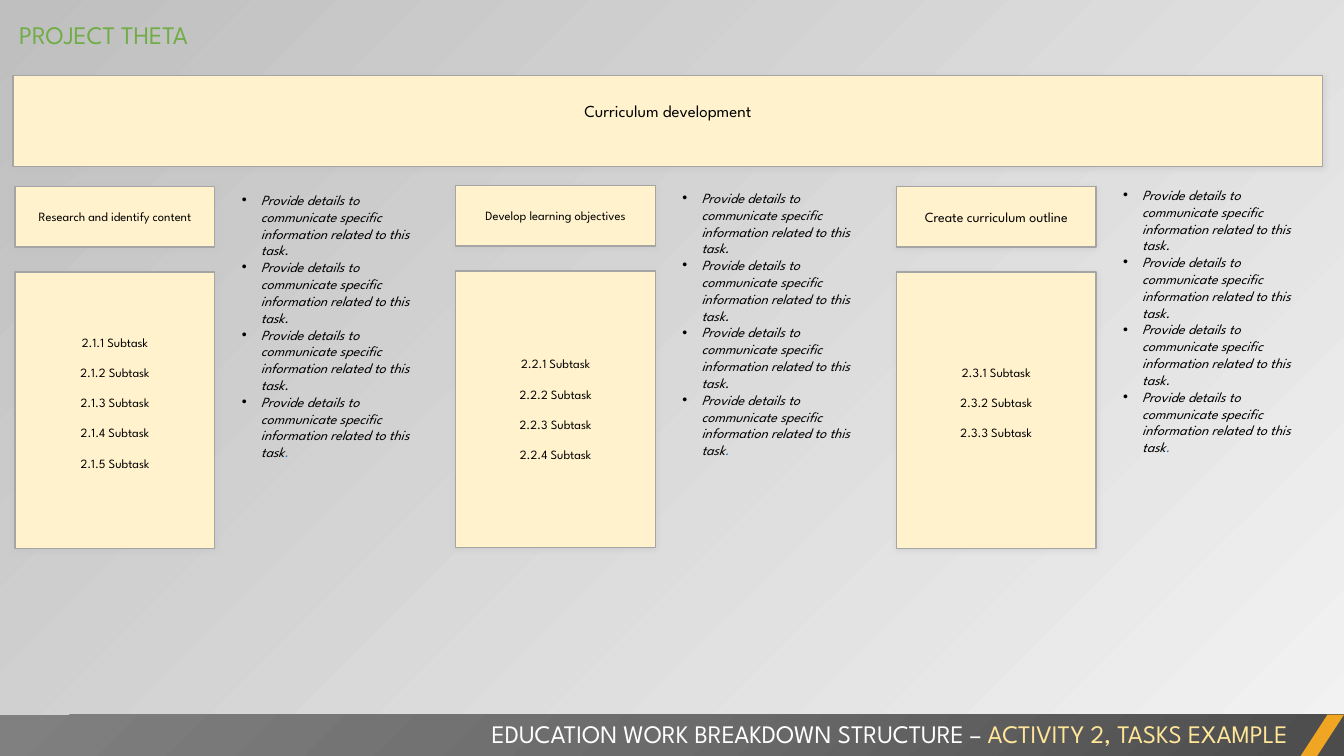
from pptx import Presentation
from pptx.dml.color import RGBColor
from pptx.enum.shapes import MSO_SHAPE
from pptx.enum.text import MSO_ANCHOR, MSO_AUTO_SIZE, PP_ALIGN
from pptx.oxml import parse_xml
from pptx.oxml.ns import nsdecls
from pptx.util import Inches, Pt

# Content
PROJECT = "PROJECT THETA"
ACTIVITY = "Curriculum development"
FOOTER = [("EDUCATION WORK BREAKDOWN STRUCTURE – ", "white"),
          ("ACTIVITY 2, TASKS EXAMPLE", "gold")]
DETAIL = "Provide details to communicate specific information related to this task"
DETAIL_COUNT = 4
# Tops are in inches; "lift" is extra space under the subtasks
TASKS = [
    {"name": "Research and identify content", "size": "small", "subtasks": 5,
     "top": 1.85, "notes_top": 1.85, "lift": 0.15},
    {"name": "Develop learning objectives", "size": "small", "subtasks": 4,
     "top": 1.84, "notes_top": 1.83, "lift": 0},
    {"name": "Create curriculum outline", "size": "note", "subtasks": 3,
     "top": 1.85, "notes_top": 1.8, "lift": 0.15},
]

THEME = {
    "font": "League Spartan",
    "color": {"black": "000000", "white": "FFFFFF", "gold": "FFE699",
              "green": "70AD47", "blue": "2E75B6", "card": "FFF2CC",
              "border": "A5A5A5", "shadow": "BFBFBF", "accent": "F0A622",
              "bg_light": "F2F2F2", "bg_dark": "BFBFBF"},
    "bar": [(0, "4C4C4C"), (50, "6B6B6B"), (100, "808080")],
    "size": {"title": 18, "activity": 12, "note": 10, "small": 9},
}

# Layout, in inches
LEFT, COLUMN_STEP, CARD_W = 0.15, 4.37, 1.98
NAME_H, LIST_DY, LIST_H = 0.6, 0.85, 2.74
NOTES_DX, NOTES_W, NOTES_H = 2.15, 2.06, 3
BAR_TOP, BAR_H = 7.09, 0.41


def rgb(name):
    return RGBColor.from_string(THEME["color"][name])


def add_run(p, text, size, color="black", italic=None):
    r = p.add_run()
    r.text = text
    r.font.name = THEME["font"]
    r.font.size = Pt(THEME["size"][size])
    r.font.color.rgb = rgb(color)
    r.font.italic = italic


def paragraphs(tf, count):
    return [tf.paragraphs[0]] + [tf.add_paragraph() for _ in range(count - 1)]


def add_box(shape, x, y, w, h):
    s = slide.shapes.add_shape(shape, Inches(x), Inches(y), Inches(w), Inches(h))
    s.shadow.inherit = False
    return s


def add_card(x, y, w, h, lines, size, lift=0.0):
    s = add_box(MSO_SHAPE.RECTANGLE, x, y, w, h)
    s.fill.solid()
    s.fill.fore_color.rgb = rgb("card")
    s.line.color.rgb = rgb("border")
    s.line.width = Pt(1)
    effects = s._element.spPr.find(".//{*}effectLst")
    effects.append(parse_xml(
        f'<a:outerShdw {nsdecls("a")} blurRad="{Pt(4)}" dist="{Pt(1)}" dir="5400000" '
        f'algn="t" rotWithShape="0"><a:srgbClr val="{THEME["color"]["shadow"]}">'
        '<a:alpha val="40000"/></a:srgbClr></a:outerShdw>'))
    tf = s.text_frame
    tf.word_wrap = True
    tf.vertical_anchor = MSO_ANCHOR.MIDDLE
    tf.margin_bottom = Inches(0.05 + lift)
    for i, (p, line) in enumerate(zip(paragraphs(tf, len(lines)), lines)):
        p.alignment = PP_ALIGN.CENTER
        p.space_before = Pt(10.8 if i else 0)
        add_run(p, line, size)


def add_text(x, y, w, h):
    s = slide.shapes.add_textbox(Inches(x), Inches(y), Inches(w), Inches(h))
    s.text_frame.word_wrap = True
    return s.text_frame


def add_bullet(p):
    pPr = p._p.get_or_add_pPr()
    pPr.set("marL", str(Inches(0.19)))
    pPr.set("indent", str(Inches(-0.19)))
    pPr.append(parse_xml(f'<a:buFont {nsdecls("a")} typeface="Arial"/>'))
    pPr.append(parse_xml(f'<a:buChar {nsdecls("a")} char="•"/>'))


prs = Presentation()
prs.slide_width, prs.slide_height = Inches(13.33), Inches(7.5)
slide = prs.slides.add_slide(prs.slide_layouts[5])

# Background
bg = slide.background.fill
bg.gradient()
bg.gradient_angle = 135
for stop, (position, name) in zip(bg.gradient_stops, [(0, "bg_light"), (1, "bg_dark")]):
    stop.position = position
    stop.color.rgb = rgb(name)

# Title
title = slide.shapes.title
title.left, title.top = Inches(0.09), Inches(0.14)
title.width, title.height = Inches(10.11), Inches(0.4)
tf = title.text_frame
tf.word_wrap = True
tf.auto_size = MSO_AUTO_SIZE.NONE
tf.vertical_anchor = MSO_ANCHOR.TOP
tf.paragraphs[0].alignment = PP_ALIGN.LEFT
add_run(tf.paragraphs[0], PROJECT, "title", "green")

# Activity banner
add_card(0.13, 0.75, 12.99, 0.9, [ACTIVITY], "activity", 0.2)

# Task columns: name, subtasks, details
for i, task in enumerate(TASKS):
    x, y = LEFT + i * COLUMN_STEP, task["top"]
    add_card(x, y, CARD_W, NAME_H, [task["name"]], task["size"])
    subtasks = [f"2.{i + 1}.{n + 1} Subtask" for n in range(task["subtasks"])]
    add_card(x, y + LIST_DY, CARD_W, LIST_H, subtasks, "small", task["lift"])
    tf = add_text(x + NOTES_DX, task["notes_top"], NOTES_W, NOTES_H)
    for n, p in enumerate(paragraphs(tf, DETAIL_COUNT), 1):
        add_bullet(p)
        add_run(p, DETAIL, "note", italic=True)
        add_run(p, ".", "note", "blue" if n == DETAIL_COUNT else "black", True)

# Footer bar with a radial gradient from its lower right corner
bar = add_box(MSO_SHAPE.RECTANGLE, 0, BAR_TOP, 13.33, BAR_H)
bar.line.fill.background()
stops = "".join(f'<a:gs pos="{pos * 1000}"><a:srgbClr val="{color}"/></a:gs>'
                for pos, color in THEME["bar"])
bar._element.spPr.insert(2, parse_xml(
    f'<a:gradFill {nsdecls("a")} rotWithShape="1"><a:gsLst>{stops}</a:gsLst>'
    '<a:path path="circle"><a:fillToRect l="100000" t="100000"/></a:path></a:gradFill>'))

slash = add_box(MSO_SHAPE.PARALLELOGRAM, 12.9, BAR_TOP, 0.43, BAR_H)
slash.adjustments[0] = 0.65
slash.fill.solid()
slash.fill.fore_color.rgb = rgb("accent")
slash.line.fill.background()

p = add_text(1.73, 7.08, 11.14, 0.4).paragraphs[0]
p.alignment = PP_ALIGN.RIGHT
for text, color in FOOTER:
    add_run(p, text, "title", color)

prs.save("out.pptx")
